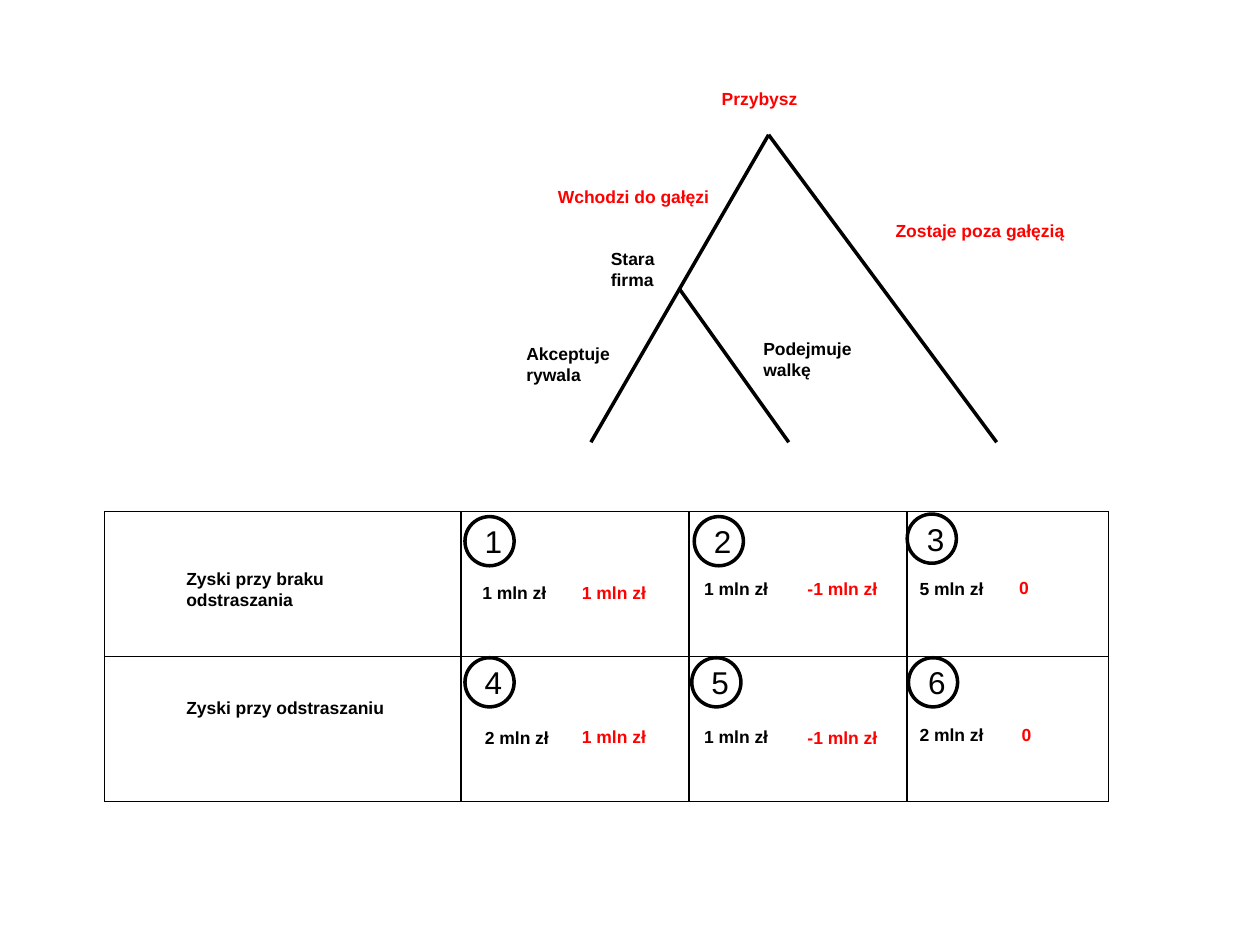
from dataclasses import dataclass
from typing import Any

from lxml.etree import SubElement
from pptx import Presentation
from pptx.dml.color import RGBColor
from pptx.enum.shapes import MSO_CONNECTOR, MSO_SHAPE
from pptx.enum.text import MSO_ANCHOR, MSO_AUTO_SIZE, PP_ALIGN
from pptx.oxml.ns import qn
from pptx.util import Inches, Pt


@dataclass(frozen=True)
class Theme:
    ink: RGBColor = RGBColor(0, 0, 0)
    newcomer: RGBColor = RGBColor(255, 0, 0)
    font: str = "Arial"
    label_size: int = 10
    number_size: int = 18
    line_width: int = 2
    border_width: int = 1


@dataclass(frozen=True)
class Label:
    text: str
    left: float
    top: float
    width: float
    height: float
    color: RGBColor


@dataclass(frozen=True)
class Branch:
    start: tuple[float, float]
    end: tuple[float, float]


@dataclass(frozen=True)
class Outcome:
    number: int
    circle: tuple[float, float]
    firm_profit: str
    firm_at: tuple[float, float]
    newcomer_profit: str
    newcomer_at: tuple[float, float]


THEME = Theme()
CIRCLE_SIZE = 0.39
PROFIT_SIZE = (0.79, 0.27)
TABLE_AT = (0.83, 4.06)
COLUMN_WIDTHS = (2.83, 1.81, 1.73, 1.6)
ROW_HEIGHTS = (1.15, 1.15)

ROOT, FIRM_NODE = (6.1, 1.07), (5.39, 2.29)
BRANCHES = [
    Branch(ROOT, (4.69, 3.51)),
    Branch(ROOT, (7.91, 3.51)),
    Branch(FIRM_NODE, (6.26, 3.51)),
]
LABELS = [
    Label("Przybysz", 5.63, 0.65, 1.54, 0.27, THEME.newcomer),
    Label("Wchodzi do gałęzi", 4.33, 1.43, 1.54, 0.27, THEME.newcomer),
    Label("Zostaje poza gałęzią", 7.01, 1.7, 1.56, 0.27, THEME.newcomer),
    Label("Stara firma", 4.75, 1.92, 0.87, 0.44, THEME.ink),
    Label("Akceptuje rywala", 4.08, 2.67, 0.87, 0.44, THEME.ink),
    Label("Podejmuje walkę", 5.96, 2.63, 1.04, 0.44, THEME.ink),
    Label("Zyski przy braku odstraszania", 1.38, 4.46, 1.81, 0.44, THEME.ink),
    Label("Zyski przy odstraszaniu", 1.38, 5.48, 1.81, 0.27, THEME.ink),
]
OUTCOMES = [
    Outcome(1, (3.69, 4.1), "1 mln zł", (3.73, 4.57), "1 mln zł", (4.52, 4.57)),
    Outcome(2, (5.51, 4.1), "1 mln zł", (5.49, 4.54), "-1 mln zł", (6.31, 4.54)),
    Outcome(3, (7.2, 4.08), "5 mln zł", (7.2, 4.54), "0", (7.99, 4.53)),
    Outcome(4, (3.69, 5.22), "2 mln zł", (3.75, 5.72), "1 mln zł", (4.52, 5.71)),
    Outcome(5, (5.49, 5.22), "1 mln zł", (5.49, 5.71), "-1 mln zł", (6.31, 5.72)),
    Outcome(6, (7.21, 5.22), "2 mln zł", (7.2, 5.7), "0", (8.01, 5.7)),
]


def apply_format(target: Any, values: dict[str, Any]) -> None:
    for name, value in values.items():
        setattr(target, name, value)


def write_text(paragraph: Any, text: str, size: int, color: RGBColor, bold: bool) -> None:
    run = paragraph.add_run()
    run.text = text
    apply_format(run.font, {"name": THEME.font, "size": Pt(size), "bold": bold})
    run.font.color.rgb = color


def style_line(line: Any) -> None:
    line.color.rgb = THEME.ink
    line.width = Pt(THEME.line_width)


def set_borders(cell: Any) -> None:
    properties = cell._tc.get_or_add_tcPr()
    for side in ("lnL", "lnR", "lnT", "lnB"):
        border = SubElement(properties, qn(f"a:{side}"), w=str(Pt(THEME.border_width)))
        fill = SubElement(border, qn("a:solidFill"))
        SubElement(fill, qn("a:srgbClr"), val=str(THEME.ink))


def draw_table(slide: Any) -> None:
    left, top = TABLE_AT
    table = slide.shapes.add_table(
        len(ROW_HEIGHTS), len(COLUMN_WIDTHS), Inches(left), Inches(top),
        Inches(sum(COLUMN_WIDTHS)), Inches(sum(ROW_HEIGHTS)),
    ).table
    apply_format(table, {"first_row": False, "horz_banding": False})
    for column, width in zip(table.columns, COLUMN_WIDTHS):
        column.width = Inches(width)
    for row, height in zip(table.rows, ROW_HEIGHTS):
        row.height = Inches(height)
    for cell in table.iter_cells():
        set_borders(cell)
        cell.fill.background()


def draw_branch(slide: Any, branch: Branch) -> None:
    points = [Inches(value) for value in (*branch.start, *branch.end)]
    connector = slide.shapes.add_connector(MSO_CONNECTOR.STRAIGHT, *points)
    style_line(connector.line)
    SubElement(connector._element.spPr, qn("a:effectLst"))


def draw_label(slide: Any, label: Label) -> None:
    bounds = (label.left, label.top, label.width, label.height)
    frame = slide.shapes.add_textbox(*map(Inches, bounds)).text_frame
    apply_format(frame, {"word_wrap": True, "auto_size": MSO_AUTO_SIZE.SHAPE_TO_FIT_TEXT})
    write_text(frame.paragraphs[0], label.text, THEME.label_size, label.color, True)


def draw_outcome(slide: Any, outcome: Outcome) -> None:
    draw_label(slide, Label(outcome.firm_profit, *outcome.firm_at, *PROFIT_SIZE, THEME.ink))
    draw_label(
        slide,
        Label(outcome.newcomer_profit, *outcome.newcomer_at, *PROFIT_SIZE, THEME.newcomer),
    )
    bounds = (*outcome.circle, CIRCLE_SIZE, CIRCLE_SIZE)
    shape = slide.shapes.add_shape(MSO_SHAPE.OVAL, *map(Inches, bounds))
    shape.shadow.inherit = False
    shape.fill.background()
    style_line(shape.line)
    shape.text_frame.vertical_anchor = MSO_ANCHOR.MIDDLE
    paragraph = shape.text_frame.paragraphs[0]
    paragraph.alignment = PP_ALIGN.CENTER
    write_text(paragraph, str(outcome.number), THEME.number_size, THEME.ink, False)


def main() -> None:
    presentation = Presentation()
    apply_format(presentation, {"slide_width": Inches(10), "slide_height": Inches(7.5)})
    slide = presentation.slides.add_slide(presentation.slide_layouts[6])
    draw_table(slide)
    for branch in BRANCHES:
        draw_branch(slide, branch)
    for label in LABELS:
        draw_label(slide, label)
    for outcome in OUTCOMES:
        draw_outcome(slide, outcome)
    presentation.save("out.pptx")


if __name__ == "__main__":
    main()
